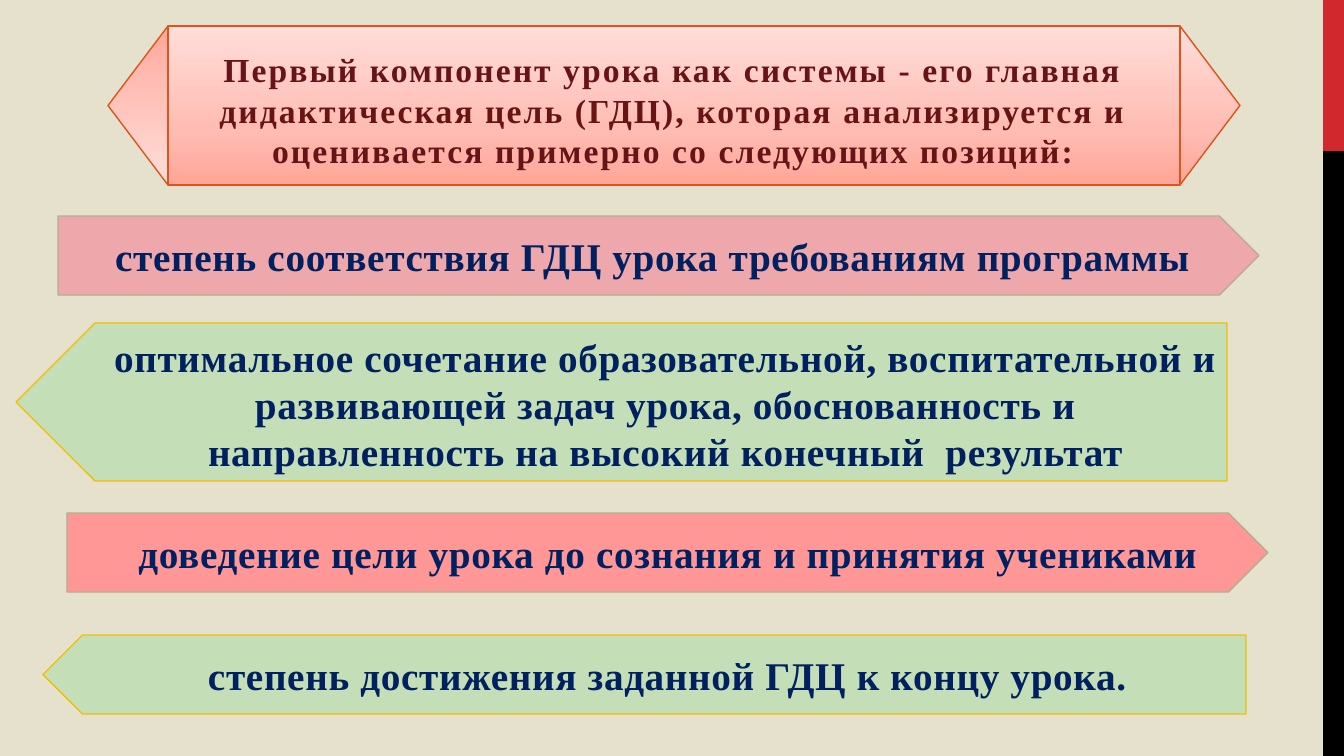
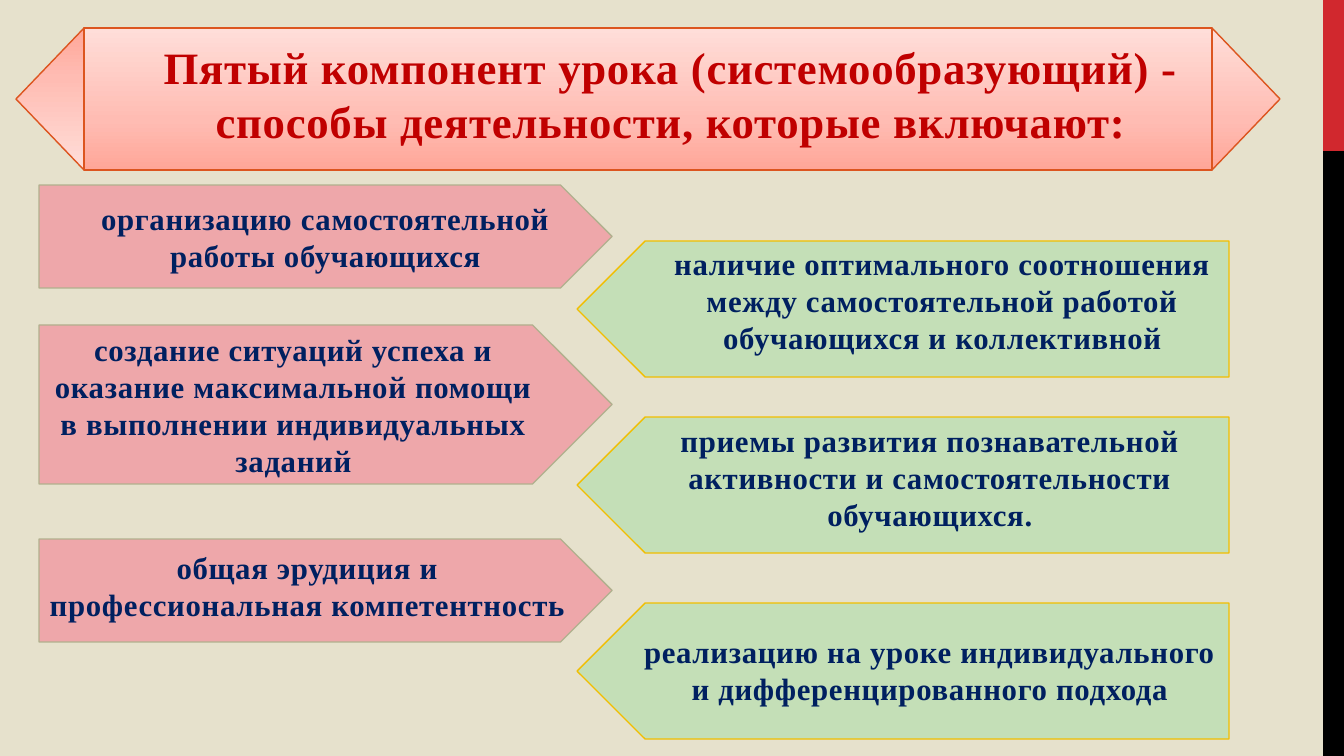
from lxml import etree
from pptx import Presentation
from pptx.dml.color import RGBColor
from pptx.enum.shapes import MSO_SHAPE
from pptx.enum.text import MSO_ANCHOR, PP_ALIGN
from pptx.oxml.ns import qn
from pptx.util import Emu, Pt

RECT = MSO_SHAPE.RECTANGLE
CHEVRON = MSO_SHAPE.CHEVRON
PLATE = MSO_SHAPE.PENTAGON
CENTER = PP_ALIGN.CENTER
TOP, BOTTOM = MSO_ANCHOR.TOP, MSO_ANCHOR.BOTTOM

SCALE = 914400 / 100.8
WIDE, HIGH = 1344, 756
FONT = "Times New Roman"
COLORS = {
    "paper": "E6E1CC", "red": "D1282E", "black": "000000",
    "rose": "EEA7AA", "coral": "FF9797", "green": "C4DFB7",
    "olive": "B1B08E", "gold": "F1BE00", "rust": "DC551F",
    "navy": "002060", "wine": "681417", "crimson": "C00000",
}
BLUSH = [(0, "FFA698"), (35, "FFBCB3"), (100, "FFDED9")]


def px(*nums):
    return [Emu(round(n * SCALE)) for n in nums]


def color(name):
    return RGBColor.from_string(COLORS[name])


def blend(shape):
    """Fill a shape with the blush gradient, darkest at the bottom."""
    shape.fill.gradient()
    shape.fill.gradient_angle = 90
    stops = next(shape.element.iter(qn("a:gsLst")))
    for stop in list(stops):
        stops.remove(stop)
    for pos, tone in BLUSH:
        stop = etree.SubElement(stops, qn("a:gs"), pos=str(pos * 1000))
        etree.SubElement(stop, qn("a:srgbClr"), val=tone)


class Deck:
    def __init__(self):
        self.file = Presentation()
        self.file.slide_width, self.file.slide_height = px(WIDE, HIGH)
        self.slide = None

    def page(self):
        """Start a slide with its background and the two side bands."""
        self.slide = self.file.slides.add_slide(self.file.slide_layouts[6])
        back = self.slide.background.fill
        back.solid()
        back.fore_color.rgb = color("paper")
        self.shape(RECT, (1323, 0, 21, 151), "red")
        self.shape(RECT, (1323, 151, 21, 605), "black")

    def shape(self, kind, box, fill=None, line=None, flip=False, group=None):
        """Add a preset shape; without a fill it takes the gradient."""
        host = group or self.slide
        item = host.shapes.add_shape(kind, *px(*box))
        item.shadow.inherit = False
        if fill:
            item.fill.solid()
            item.fill.fore_color.rgb = color(fill)
        else:
            blend(item)
        if line:
            item.line.color.rgb = color(line)
            item.line.width = Pt(1)
        else:
            item.line.fill.background()
        if flip:
            item.rotation = 180

    def text(self, words, box, size=28, tone="navy", gap=0.5, anchor=TOP):
        frame = self.slide.shapes.add_textbox(*px(*box)).text_frame
        frame.word_wrap = True
        frame.vertical_anchor = anchor
        para = frame.paragraphs[0]
        para.alignment = CENTER
        run = para.add_run()
        run.text = words
        font = run.font
        font.name, font.size, font.bold = FONT, Pt(size), True
        font.color.rgb = color(tone)
        run._r.get_or_add_rPr().set("spc", str(round(gap * 100)))

    def banner(self, box, tip):
        """Draw a heading bar with a pointed tip at each end."""
        x, y, w, h = box
        group = self.slide.shapes.add_group_shape()
        ends = [(x, True), (x + w - 2 * tip, False)]
        for left, flip in ends:
            self.shape(CHEVRON, (left, y, 2 * tip, h), line="rust",
                       flip=flip, group=group)
        self.shape(RECT, (x + tip, y, w - 2 * tip, h), line="rust",
                   group=group)

    def plate(self, box, words, area, fill="rose", size=28):
        """Draw an arrow plate and its caption; green ones point left."""
        left = fill == "green"
        self.shape(PLATE, box, fill, "gold" if left else "olive", left)
        self.text(words, area, size=size)


def first(deck):
    deck.page()
    deck.banner((108, 26, 1132, 159), 60)
    deck.text("Первый компонент урока как системы - его главная дидактическая "
              "цель (ГДЦ), которая анализируется и оценивается примерно со "
              "следующих позиций:", (119, 21, 1108, 154),
              size=24, tone="wine", gap=1.5, anchor=BOTTOM)
    deck.plate((58, 216, 1201, 79),
               "степень соответствия ГДЦ урока требованиям программы",
               (63, 227, 1180, 57))
    deck.plate((16, 323, 1211, 158),
               "оптимальное сочетание образовательной, воспитательной и "
               "развивающей задач урока, обоснованность и направленность на "
               "высокий конечный  результат", (96, 328, 1140, 152), "green")
    deck.plate((67, 513, 1201, 79),
               "доведение цели урока до сознания и принятия учениками",
               (93, 524, 1151, 57), "coral")
    deck.plate((43, 635, 1203, 79),
               "степень достижения заданной ГДЦ к концу урока.",
               (73, 646, 1190, 57), "green")


def second(deck):
    deck.page()
    deck.banner((16, 28, 1264, 142), 68)
    deck.text("Пятый компонент урока (системообразующий) - способы "
              "деятельности, которые включают:", (117, 41, 1108, 111),
              size=32, tone="crimson", anchor=BOTTOM)
    rose = [
        (185, 103, "организацию самостоятельной работы обучающихся", 195, 573),
        (325, 159, "создание ситуаций успеха и оказание максимальной помощи "
         "в выполнении индивидуальных заданий", 326, 509),
        (539, 103, "общая эрудиция и профессиональная компетентность",
         544, 537),
    ]
    for y, h, words, top, w in rose:
        deck.plate((39, y, 573, h), words, (39, top, w, h - 18), size=22)
    green = [
        (241, "наличие оптимального соотношения между самостоятельной "
         "работой обучающихся и коллективной", 240, 623),
        (417, "приемы развития познавательной активности и "
         "самостоятельности обучающихся.", 417, 598),
        (603, "реализацию на уроке индивидуального и дифференцированного "
         "подхода", 628, 598),
    ]
    for y, words, top, w in green:
        deck.plate((577, y, 652, 136), words, (631, top, w, 100),
                   "green", size=22)


def main():
    deck = Deck()
    first(deck)
    second(deck)
    deck.file.save("out.pptx")


if __name__ == "__main__":
    main()
